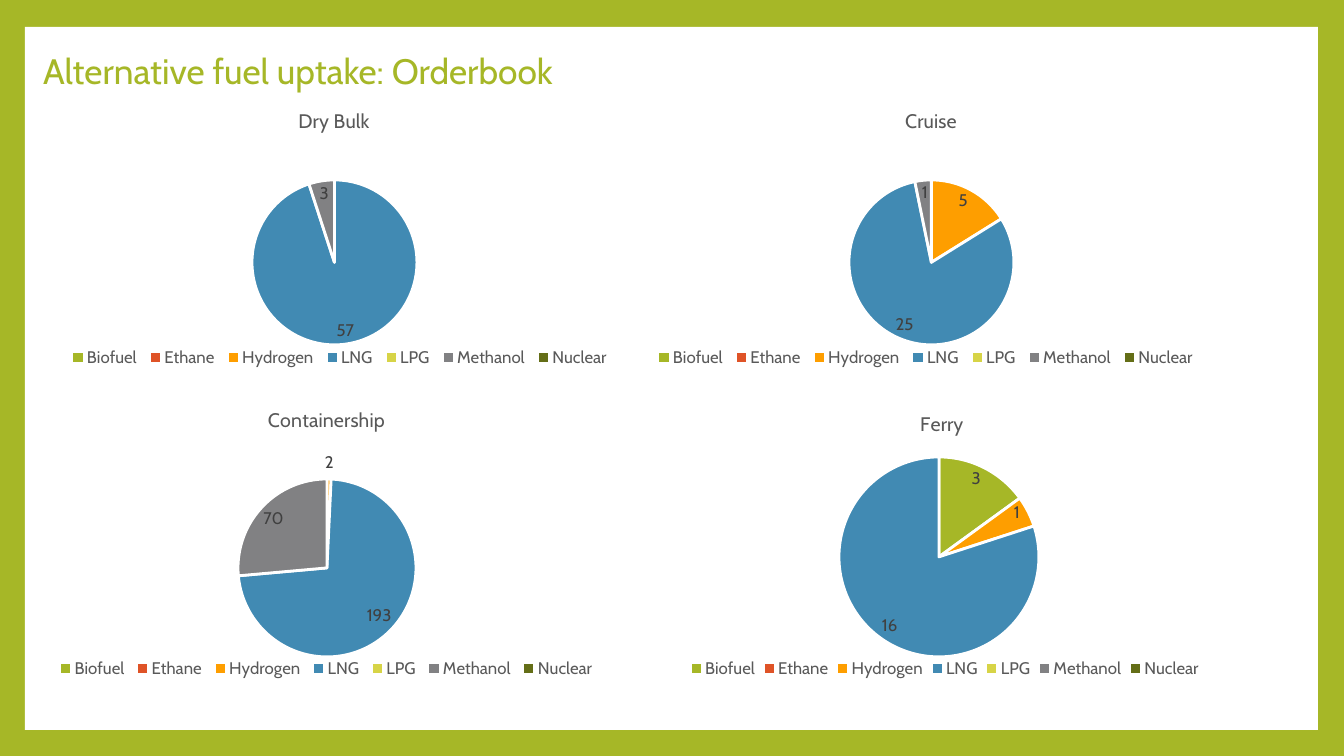
import pptx
import pptx.chart.data
import pptx.dml.color
import pptx.enum.chart
import pptx.enum.shapes
import pptx.enum.text
import pptx.oxml
import pptx.oxml.ns
import pptx.util


def px(length):
    return pptx.util.Inches(length / 100.8)


def style(font, size, colour):
    font.name = "Cabin"
    font.size = pptx.util.Pt(size)
    font.bold = False
    font.color.rgb = pptx.dml.color.RGBColor.from_string(colour)


GREEN, WHITE = "A6B727", "FFFFFF"
FUEL_COLOURS = {
    "Biofuel": GREEN,
    "Ethane": "DF5327",
    "Hydrogen": "FE9E00",
    "LNG": "418AB3",
    "LPG": "D7D447",
    "Methanol": "818183",
    "Nuclear": "646E17",
}

# Ship type, series name, orders per fuel, then the boxes of chart, pie and legend
ORDERBOOK = [
    ("Dry Bulk", "Dry Bulk", (0, 0, 0, 57, 0, 3, 0),
     (53, 92, 562, 302), (252, 180, 165, 165), (65, 346, 550, 24)),
    ("Cruise", "Cruise", (0, 0, 5, 25, 0, 1, 0),
     (650, 92, 562, 302), (849, 180, 165, 165), (651, 346, 550, 24)),
    ("Containership", "Series 1", (0, 0, 2, 193, 0, 70, 0),
     (53, 391, 547, 317), (238, 479, 178, 178), (53, 657, 547, 24)),
    ("Ferry", "Ferry", (3, 0, 1, 16, 0, 0, 0),
     (672, 395, 540, 312), (839, 457, 200, 200), (682, 657, 526, 24)),
]

deck = pptx.Presentation()
deck.slide_width, deck.slide_height = px(1344), px(756)
slide = deck.slides.add_slide(deck.slide_layouts[5])
slide.background.fill.solid()
slide.background.fill.fore_color.rgb = pptx.dml.color.RGBColor.from_string(GREEN)

panel = slide.shapes.add_shape(
    pptx.enum.shapes.MSO_SHAPE.RECTANGLE, px(25), px(27), px(1293), px(703))
panel.shadow.inherit = False
panel.fill.solid()
panel.fill.fore_color.rgb = pptx.dml.color.RGBColor.from_string(WHITE)
panel.line.fill.background()

heading = slide.shapes.title
panel._element.addnext(heading._element)
heading.left, heading.top, heading.width, heading.height = px(33), px(47), px(834), px(47)
heading.text_frame.text = "Alternative fuel uptake: Orderbook"
heading.text_frame.auto_size = pptx.enum.text.MSO_AUTO_SIZE.NONE
heading.text_frame.vertical_anchor = pptx.enum.text.MSO_ANCHOR.MIDDLE
heading_line = heading.text_frame.paragraphs[0]
heading_line.alignment = pptx.enum.text.PP_ALIGN.LEFT
style(heading_line.font, 25.2, GREEN)

for ship_type, series_name, orders, box, pie_box, legend_box in ORDERBOOK:
    fuel_data = pptx.chart.data.CategoryChartData()
    fuel_data.categories = list(FUEL_COLOURS)
    fuel_data.add_series(series_name, orders)
    chart = slide.shapes.add_chart(
        pptx.enum.chart.XL_CHART_TYPE.PIE, *map(px, box), fuel_data).chart
    style(chart.font, 10, "000000")

    chart.has_title = True
    chart.chart_title.text_frame.text = ship_type
    style(chart.chart_title.text_frame.paragraphs[0].font, 14, "595959")
    chart.chart_title.include_in_layout = False

    chart.has_legend = True
    chart.legend.position = pptx.enum.chart.XL_LEGEND_POSITION.BOTTOM
    chart.legend.include_in_layout = False
    style(chart.legend.font, 12, "595959")

    pie = chart.plots[0]
    pie.vary_by_categories = True
    for index, colour in enumerate(FUEL_COLOURS.values()):
        wedge = pie.series[0].points[index].format
        wedge.fill.solid()
        wedge.fill.fore_color.rgb = pptx.dml.color.RGBColor.from_string(colour)
        wedge.line.color.rgb = pptx.dml.color.RGBColor.from_string(WHITE)
        wedge.line.width = pptx.util.Pt(2)

    labels = pie.series[0].data_labels
    labels.show_value = True
    labels.position = pptx.enum.chart.XL_LABEL_POSITION.BEST_FIT
    labels.number_format = "0;;;"  # hides the zeros
    labels.number_format_is_linked = False
    style(labels.font, 12, "404040")

    # Fractions of the chart box fix the places of pie and legend
    chart_left, chart_top, chart_width, chart_height = box
    plot_area = chart._chartSpace.chart.plotArea
    legend = chart.legend._element
    for part, position, target, (left, top, width, height) in (
            (plot_area, 0, '<c:layoutTarget val="inner"/>', pie_box),
            (legend, 1, "", legend_box)):
        for automatic in part.findall(pptx.oxml.ns.qn("c:layout")):
            part.remove(automatic)
        part.insert(position, pptx.oxml.parse_xml(
            f'<c:layout {pptx.oxml.ns.nsdecls("c")}><c:manualLayout>{target}'
            '<c:xMode val="edge"/><c:yMode val="edge"/>'
            f'<c:x val="{(left - chart_left) / chart_width}"/>'
            f'<c:y val="{(top - chart_top) / chart_height}"/>'
            f'<c:w val="{width / chart_width}"/><c:h val="{height / chart_height}"/>'
            '</c:manualLayout></c:layout>'))

deck.save("out.pptx")
